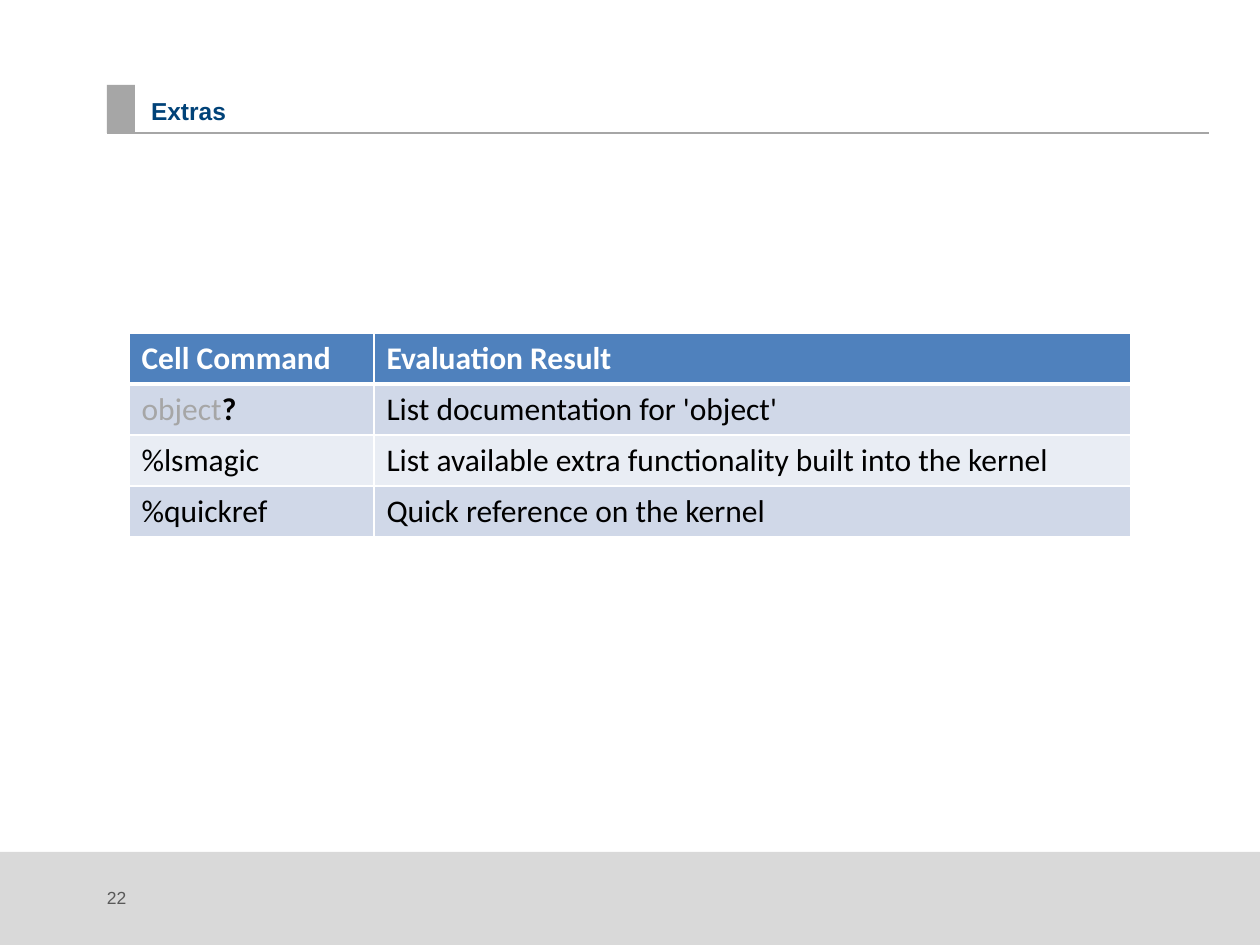
from lxml import etree
from pptx import Presentation
from pptx.dml.color import RGBColor
from pptx.enum.shapes import MSO_CONNECTOR, MSO_SHAPE
from pptx.enum.text import MSO_ANCHOR, PP_ALIGN
from pptx.oxml.ns import qn
from pptx.util import Pt

RECTANGLE = MSO_SHAPE.RECTANGLE
STRAIGHT = MSO_CONNECTOR.STRAIGHT
BOTTOM, TOP = MSO_ANCHOR.BOTTOM, MSO_ANCHOR.TOP
LEFT = PP_ALIGN.LEFT

EMU_PER_PX = 914400 / 126
COLORS = {
    "title": "004278", "accent": "A6A6A6", "footer": "D9D9D9",
    "number": "595959", "header": "4F81BD", "odd": "D0D8E8",
    "even": "E9EDF4", "white": "FFFFFF", "black": "000000",
}


def px(*lengths):
    return [round(length * EMU_PER_PX) for length in lengths]


def style_font(font, name, size, color, bold=False):
    font.name, font.size, font.bold = name, Pt(size), bold
    font.color.rgb = RGBColor.from_string(COLORS[color])


prs = Presentation()
prs.slide_width, prs.slide_height = px(1260, 945)
slide = prs.slides.add_slide(prs.slide_layouts[5])
shapes = slide.shapes

# Title rule, title marker and footer band
rule = shapes.add_connector(STRAIGHT, *px(107, 133, 1209, 133))
rule.line.color.rgb = RGBColor.from_string(COLORS["accent"])
rule.line.width = Pt(1)
etree.SubElement(rule._element.spPr, qn("a:effectLst"))

for color, box in (("accent", (107, 85, 28, 48)), ("footer", (0, 852, 1260, 93))):
    band = shapes.add_shape(RECTANGLE, *px(*box))
    band.shadow.inherit = False
    band.fill.solid()
    band.fill.fore_color.rgb = RGBColor.from_string(COLORS[color])
    band.line.fill.background()

# Title and page number
title = shapes.title
title.left, title.top, title.width, title.height = px(151, 80, 1058, 45)
page_number = shapes.add_textbox(*px(107, 887, 63, 28))
for holder, text, anchor, size, color, bold in (
    (title, "Extras", BOTTOM, 14, "title", True),
    (page_number, "22", TOP, 10, "number", False),
):
    frame = holder.text_frame
    frame.text = text
    frame.word_wrap = True
    frame.vertical_anchor = anchor
    frame.margin_left = frame.margin_top = frame.margin_right = frame.margin_bottom = 0
    frame.paragraphs[0].alignment = LEFT
    style_font(frame.paragraphs[0].runs[0].font, "Arial", size, color, bold)

# Command table
COMMANDS = [
    ("Cell Command", "Evaluation Result"),
    ("object", "List documentation for 'object'"),
    ("%lsmagic", "List available extra functionality built into the kernel"),
    ("%quickref", "Quick reference on the kernel"),
]
COLUMN_WIDTHS = (245, 757)
ROW_HEIGHT = 51

table = shapes.add_table(
    len(COMMANDS), len(COLUMN_WIDTHS),
    *px(129, 333, sum(COLUMN_WIDTHS), ROW_HEIGHT * len(COMMANDS)),
).table
for column, width in zip(table.columns, px(*COLUMN_WIDTHS)):
    column.width = width

for row_index, texts in enumerate(COMMANDS):
    is_header = row_index == 0
    fill = "header" if is_header else "odd" if row_index % 2 else "even"
    for column_index, text in enumerate(texts):
        cell = table.cell(row_index, column_index)
        cell.text = text
        style_font(cell.text_frame.paragraphs[0].runs[0].font, "Calibri", 18,
                   "white" if is_header else "black", is_header)
        properties = cell._tc.get_or_add_tcPr()
        for side in ("lnL", "lnR", "lnT", "lnB"):
            below_header = (row_index, side) in ((0, "lnB"), (1, "lnT"))
            border = etree.SubElement(properties, qn(f"a:{side}"),
                                      w=str(Pt(3 if below_header else 1)))
            border_fill = etree.SubElement(border, qn("a:solidFill"))
            etree.SubElement(border_fill, qn("a:srgbClr"), val=COLORS["white"])
        cell.fill.solid()
        cell.fill.fore_color.rgb = RGBColor.from_string(COLORS[fill])

# The object name is a stand-in, so it is dimmed before its question mark
object_command = table.cell(1, 0).text_frame.paragraphs[0]
style_font(object_command.runs[0].font, "Calibri", 18, "accent")
question_mark = object_command.add_run()
question_mark.text = "?"
style_font(question_mark.font, "Calibri", 18, "black", True)

prs.save("out.pptx")
